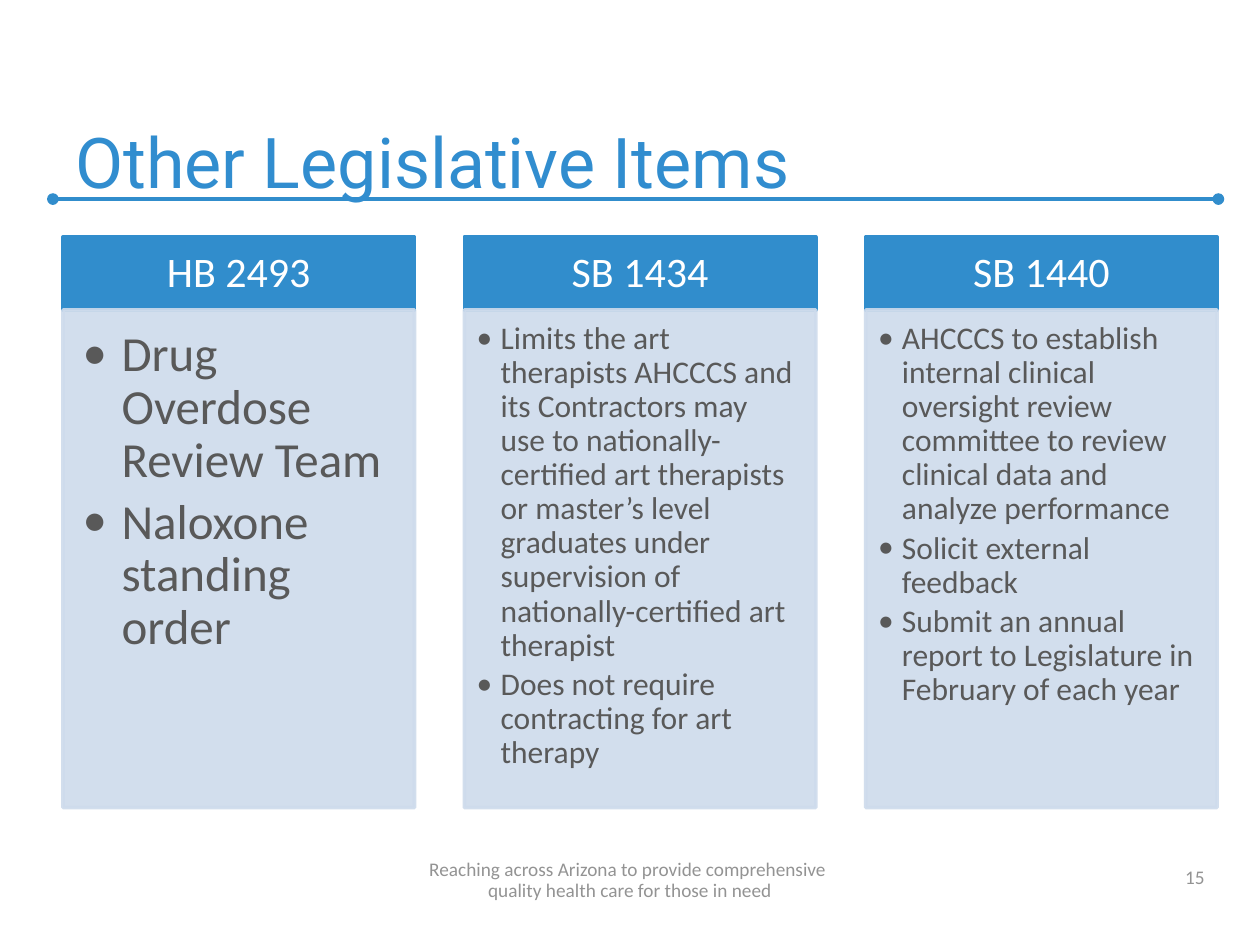
import dataclasses
import typing

import lxml.etree
import pptx
import pptx.dml.color
import pptx.enum.shapes
import pptx.enum.text
import pptx.oxml.ns
import pptx.util

WIDTH, HEIGHT = 10, 7.5
COLORS = {
    "title": "318DCF",
    "accent": "318DCC",
    "panel": "CEDBEC",
    "body": "595959",
    "footer": "939393",
    "white": "FFFFFF",
}
ALIGN = pptx.enum.text.PP_ALIGN
ANCHOR = pptx.enum.text.MSO_ANCHOR
COLUMN_LEFT, COLUMN_PITCH, COLUMN_WIDTH = 0.5, 3.185, 2.79
HEADER_TOP, HEADER_HEIGHT, PANEL_HEIGHT = 1.88, 0.58, 3.95


class Area(typing.NamedTuple):
    left: float
    top: float
    width: float
    height: float


@dataclasses.dataclass
class Style:
    size: float
    color: str
    font: str = "Calibri"
    align: ALIGN = ALIGN.LEFT
    anchor: ANCHOR = ANCHOR.TOP
    insets: tuple = (0.1, 0.05, 0.1, 0.05)
    spacing: typing.Any = 1.0
    space_after: float = 0
    indent: float = 0


@dataclasses.dataclass
class Bill:
    name: str
    size: int
    points: list


BILLS = [
    Bill("HB 2493", 28, ["Drug Overdose Review Team", "Naloxone standing order"]),
    Bill("SB 1434", 18, [
        "Limits the art therapists AHCCCS and its Contractors may use to "
        "nationally-certified art therapists or master’s level graduates under "
        "supervision of nationally-certified art therapist",
        "Does not require contracting for art therapy",
    ]),
    Bill("SB 1440", 18, [
        "AHCCCS to establish internal clinical oversight review committee to "
        "review clinical data and analyze performance",
        "Solicit external feedback",
        "Submit an annual report to Legislature in February of each year",
    ]),
]


def rgb(name: str) -> pptx.dml.color.RGBColor:
    return pptx.dml.color.RGBColor.from_string(COLORS[name])


def add_element(parent, tag: str, **attributes: str):
    return lxml.etree.SubElement(parent, pptx.oxml.ns.qn(tag), attributes)


def emu(area: Area) -> list:
    return [pptx.util.Inches(length) for length in area]


def write(box, lines: list, style: Style) -> None:
    frame = box.text_frame
    frame.word_wrap = True
    frame.vertical_anchor = style.anchor
    (frame.margin_left, frame.margin_top,
     frame.margin_right, frame.margin_bottom) = map(pptx.util.Inches, style.insets)
    frame.text = "\n".join(lines)
    for para in frame.paragraphs:
        para.alignment = style.align
        para.line_spacing = style.spacing
        para.space_after = pptx.util.Pt(style.space_after)
        if style.indent:
            properties = para._p.get_or_add_pPr()
            indent = pptx.util.Inches(style.indent)
            properties.set("marL", str(indent))
            properties.set("indent", str(-indent))
            add_element(properties, "a:buFont", typeface="Calibri")
            add_element(properties, "a:buChar", char="•")
        for span in para.runs:
            span.font.name = style.font
            span.font.size = pptx.util.Pt(style.size)
            span.font.color.rgb = rgb(style.color)


def add_text(page, area: Area, lines: list, style: Style) -> None:
    write(page.shapes.add_textbox(*emu(area)), lines, style)


def add_block(page, area: Area, color: str, lines: list, style: Style, alpha: int = 100) -> None:
    block = page.shapes.add_shape(pptx.enum.shapes.MSO_SHAPE.RECTANGLE, *emu(area))
    block.shadow.inherit = False
    block.fill.solid()
    block.fill.fore_color.rgb = rgb(color)
    block.line.color.rgb = rgb(color)
    block.line.width = pptx.util.Pt(2)
    if alpha < 100:
        for shade in block._element.spPr.iter(pptx.oxml.ns.qn("a:srgbClr")):
            add_element(shade, "a:alpha", val=str(alpha * 1000))
    write(block, lines, style)


def add_rule(page, left: float, right: float, top: float) -> None:
    rule = page.shapes.add_connector(
        pptx.enum.shapes.MSO_CONNECTOR.STRAIGHT, *emu(Area(left, top, right, top)))
    rule.line.color.rgb = rgb("accent")
    rule.line.width = pptx.util.Pt(2.25)
    outline = rule.line._get_or_add_ln()
    for end in ("a:headEnd", "a:tailEnd"):
        add_element(outline, end, type="oval")
    add_element(rule._element.spPr, "a:effectLst")


def add_bill(page, column: int, bill: Bill) -> None:
    left = COLUMN_LEFT + column * COLUMN_PITCH
    header = Style(24, "white", align=ALIGN.CENTER, anchor=ANCHOR.MIDDLE,
                   insets=(0.19, 0.11, 0.19, 0.11), spacing=0.9)
    add_block(page, Area(left, HEADER_TOP, COLUMN_WIDTH, HEADER_HEIGHT),
              "accent", [bill.name], header)
    scale = bill.size / 18
    body = Style(bill.size, "body", spacing=0.9, space_after=0.17 * bill.size,
                 insets=tuple(inset * scale for inset in (0.1, 0.1, 0.14, 0.16)),
                 indent=0.19 if bill.size == 18 else 0.31)
    add_block(page, Area(left, HEADER_TOP + HEADER_HEIGHT, COLUMN_WIDTH, PANEL_HEIGHT),
              "panel", bill.points, body, alpha=90)


def main() -> None:
    deck = pptx.Presentation()
    deck.slide_width = pptx.util.Inches(WIDTH)
    deck.slide_height = pptx.util.Inches(HEIGHT)
    page = deck.slides.add_slide(deck.slide_layouts[6])
    add_rule(page, 0.42, 9.67, 1.58)
    add_text(page, Area(0.5, 0.33, 9.08, 1.33), ["Other Legislative Items"],
             Style(40, "title", font="Roboto", anchor=ANCHOR.BOTTOM))
    for column, bill in enumerate(BILLS):
        add_bill(page, column, bill)
    add_text(page, Area(7.33, 6.78, 2.33, 0.32), ["15"],
             Style(11, "footer", align=ALIGN.RIGHT, anchor=ANCHOR.BOTTOM))
    add_text(page, Area(0, 6.78, WIDTH, 0.42),
             ["Reaching across Arizona to provide comprehensive \v"
              "quality health care for those in need"],
             Style(11, "footer", align=ALIGN.CENTER, anchor=ANCHOR.BOTTOM,
                   spacing=pptx.util.Pt(12)))
    deck.save("out.pptx")


if __name__ == "__main__":
    main()
